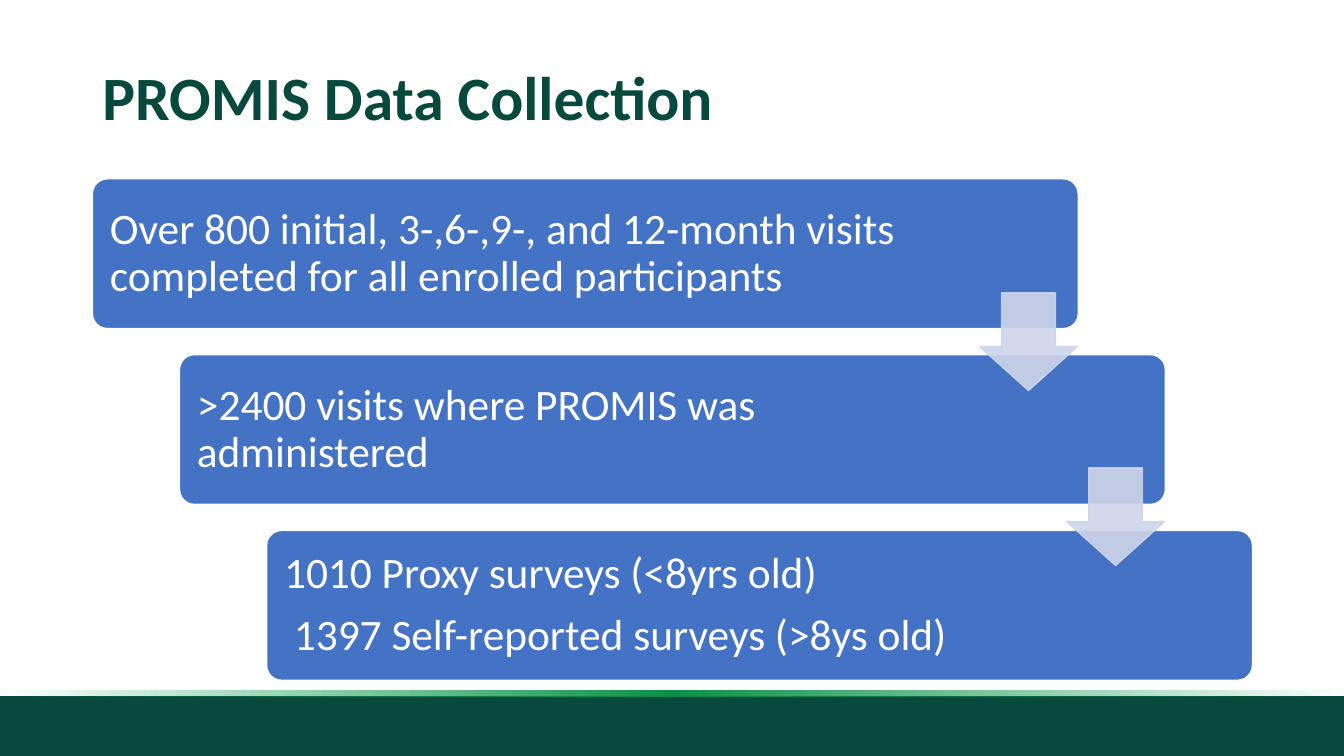
from lxml import etree
from pptx import Presentation
from pptx.dml.color import RGBColor
from pptx.enum.shapes import MSO_SHAPE
from pptx.enum.text import MSO_ANCHOR
from pptx.oxml.ns import qn
from pptx.util import Pt

RECTANGLE = MSO_SHAPE.RECTANGLE
ROUNDED = MSO_SHAPE.ROUNDED_RECTANGLE
DOWN_ARROW = MSO_SHAPE.DOWN_ARROW
MIDDLE = MSO_ANCHOR.MIDDLE

STEPS = [
    (["Over 800 initial, 3-,6-,9-, and 12-month visits completed for all enrolled participants"], 587.5),
    ([">2400 visits where PROMIS was administered"], 565.2),
    (["1010 Proxy surveys (<8yrs old)", " 1397 Self-reported surveys (>8ys old)"], 565.2),
]
STEP_X, STEP_Y = 62.2, 125.6


def rgb(value):
    return RGBColor.from_string(value)


def set_alpha(color_element, percent):
    etree.SubElement(color_element, qn("a:alpha")).set("val", str(percent * 1000))


class StaircaseSlide:
    font = "Calibri"
    green = "07493C"
    blue = "4472C4"
    pale = "CFD5EA"
    white = "FFFFFF"

    def __init__(self, deck):
        self.page = deck.slides.add_slide(deck.slide_layouts[6])

    def shape(self, kind, left, top, width, height, fill, line=None, adjustments=()):
        shape = self.page.shapes.add_shape(kind, Pt(left), Pt(top), Pt(width), Pt(height))
        shape.shadow.inherit = False
        shape.fill.solid()
        shape.fill.fore_color.rgb = rgb(fill)
        if line:
            shape.line.color.rgb = rgb(line)
            shape.line.width = Pt(1)
        else:
            shape.line.fill.background()
        for index, value in enumerate(adjustments):
            shape.adjustments[index] = value
        return shape

    def glow_band(self, left, top, width, height, stops):
        band = self.shape(RECTANGLE, left, top, width, height, self.green)
        band.fill.gradient()
        band.fill.gradient_angle = 180
        stop_list = band.element.spPr.find(".//" + qn("a:gsLst"))
        for stop in list(stop_list):
            stop_list.remove(stop)
        for position, color, opacity in stops:
            stop = etree.SubElement(stop_list, qn("a:gs"))
            stop.set("pos", str(position * 1000))
            color_element = etree.SubElement(stop, qn("a:srgbClr"))
            color_element.set("val", color)
            set_alpha(color_element, opacity)

    def arrow(self, left, top, size):
        arrow = self.shape(DOWN_ARROW, left, top, size, size, self.pale, self.pale, (0.55, 0.45))
        for color_element in arrow.element.spPr.iter(qn("a:srgbClr")):
            set_alpha(color_element, 90)

    def text(self, left, top, width, height, lines, size, color, bold=False, inset=None, after=0):
        box = self.page.shapes.add_textbox(Pt(left), Pt(top), Pt(width), Pt(height))
        frame = box.text_frame
        frame.word_wrap = True
        frame.vertical_anchor = MIDDLE
        if inset is not None:
            frame.margin_left = frame.margin_right = Pt(inset)
            frame.margin_top = frame.margin_bottom = Pt(inset)
        frame.text = "\n".join(lines)
        for para in frame.paragraphs:
            para.line_spacing = 0.9
            para.space_after = Pt(after)
            for span in para.runs:
                span.font.name = self.font
                span.font.size = Pt(size)
                span.font.bold = bold
                span.font.color.rgb = rgb(color)

    def card(self, left, top, lines, text_width):
        self.shape(ROUNDED, left, top, 704.2, 107, self.blue, self.white, (0.1,))
        self.text(left + 3.1, top + 3.1, text_width, 101.2, lines, 31, self.white, inset=9.4, after=10.85)


def main():
    deck = Presentation()
    deck.slide_width, deck.slide_height = Pt(960), Pt(540)
    slide = StaircaseSlide(deck)
    slide.shape(RECTANGLE, 0, 497.3, 960, 42.7, slide.green)
    slide.glow_band(0, 493.2, 960, 4, [(0, "0D9D4F", 0), (50, "0C9049", 100), (100, "0FAB56", 0)])
    slide.text(66, 28.75, 828, 85.7, ["PROMIS Data Collection"], 44, slide.green, bold=True)
    for index, (lines, text_width) in enumerate(STEPS):
        slide.card(66 + index * STEP_X, 127.7 + index * STEP_Y, lines, text_width)
    for index in range(len(STEPS) - 1):
        slide.arrow(699.8 + index * STEP_X, 209.2 + index * 125, 69.8)
    deck.save("out.pptx")


if __name__ == "__main__":
    main()
